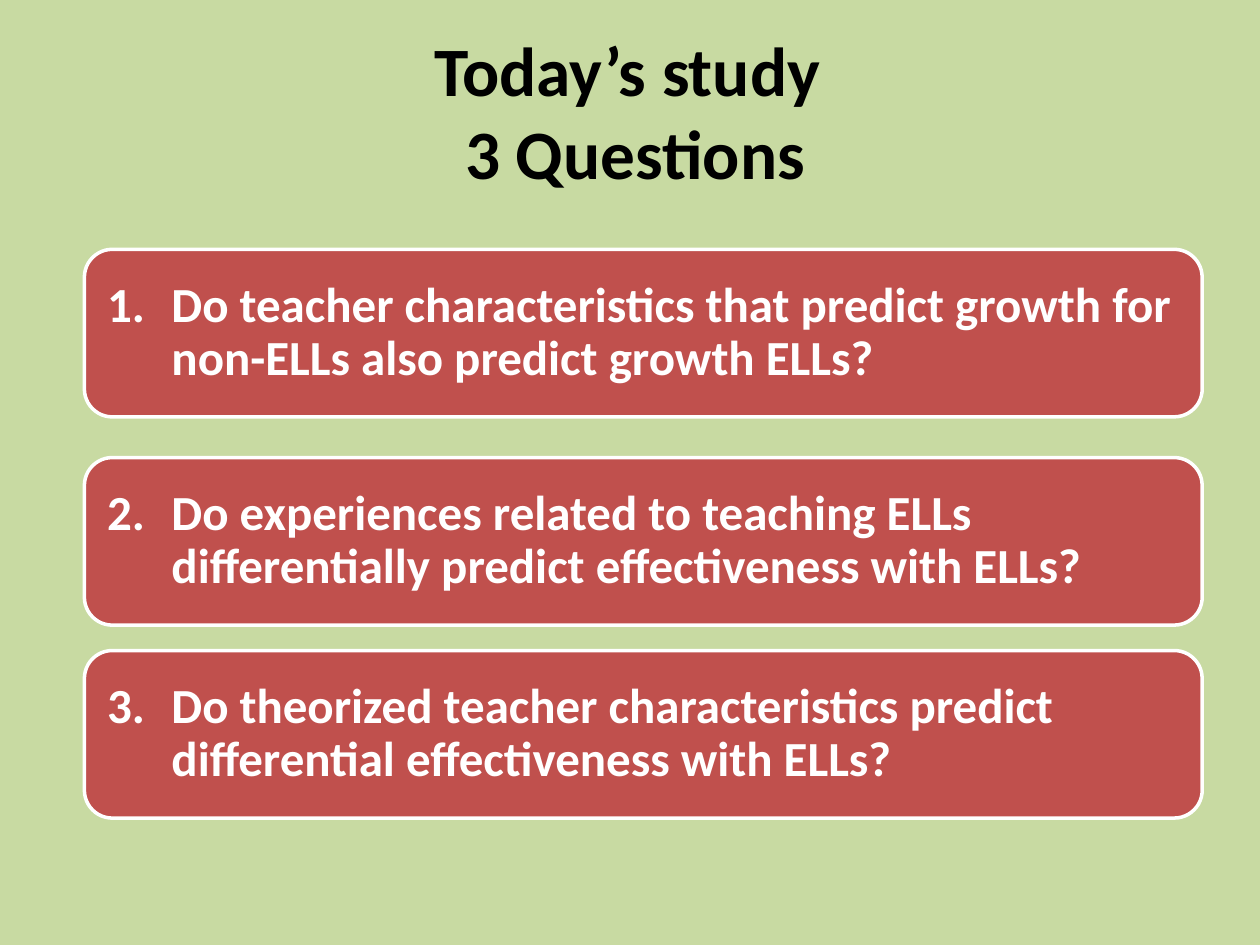
from pptx import Presentation
from pptx.dml.color import RGBColor
from pptx.enum.shapes import MSO_SHAPE as SHAPE
from pptx.enum.text import MSO_ANCHOR as ANCHOR, PP_ALIGN as ALIGN
from pptx.util import Pt

FONT = "Calibri"
GREEN, RED, WHITE, BLACK = "C8DAA2", "C0504D", "FFFFFF", "000000"
QUESTIONS = [
    (142.5, "1.", "Do teacher characteristics that predict growth for non-ELLs also predict growth ELLs?"),
    (261.5, "2.", "Do experiences related to teaching ELLs differentially predict effectiveness with ELLs?"),
    (371.75, "3.", "Do theorized teacher characteristics predict differential effectiveness with ELLs?"),
]


def paint(fmt, color):
    fmt.solid()
    fmt.fore_color.rgb = RGBColor.from_string(color)


def add_run(p, text, size, color):
    r = p.add_run()
    r.text = text
    r.font.name, r.font.size, r.font.bold = FONT, Pt(size), True
    r.font.color.rgb = RGBColor.from_string(color)


def set_title(s, lines, x, y, w, h):
    sp = s.shapes.title
    sp.left, sp.top, sp.width, sp.height = Pt(x), Pt(y), Pt(w), Pt(h)
    tf = sp.text_frame
    tf.word_wrap = True
    tf.vertical_anchor = ANCHOR.MIDDLE
    p = tf.paragraphs[0]
    p.alignment = ALIGN.CENTER
    for i, line in enumerate(lines):
        if i:
            p.add_line_break()
        add_run(p, line, 39.6, BLACK)


def add_question(s, number, question, x, y, w, h):
    sp = s.shapes.add_shape(SHAPE.ROUNDED_RECTANGLE, Pt(x), Pt(y), Pt(w), Pt(h))
    sp.shadow.inherit = False
    paint(sp.fill, RED)
    paint(sp.line.fill, WHITE)
    sp.line.width = Pt(2)
    tf = sp.text_frame
    tf.word_wrap = True
    tf.vertical_anchor = ANCHOR.MIDDLE
    tf.margin_left = tf.margin_right = tf.margin_top = tf.margin_bottom = Pt(8.4)
    p = tf.paragraphs[0]
    p.alignment = ALIGN.LEFT
    p.line_spacing = 0.9
    indent = Pt(36.75)
    pPr = p._p.get_or_add_pPr()
    pPr.set("marL", str(indent))
    pPr.set("indent", str(-indent))
    add_run(p, f"{number}\t{question}", 28, WHITE)


def main():
    prs = Presentation()
    prs.slide_width, prs.slide_height = Pt(720), Pt(540)
    s = prs.slides.add_slide(prs.slide_layouts[5])
    paint(s.background.fill, GREEN)
    set_title(s, ["Today’s study ", "3 Questions"], 39, 18, 648, 90)
    for y, number, question in QUESTIONS:
        add_question(s, number, question, 48.25, y, 638.75, 95.75)
    prs.save("out.pptx")


if __name__ == "__main__":
    main()
